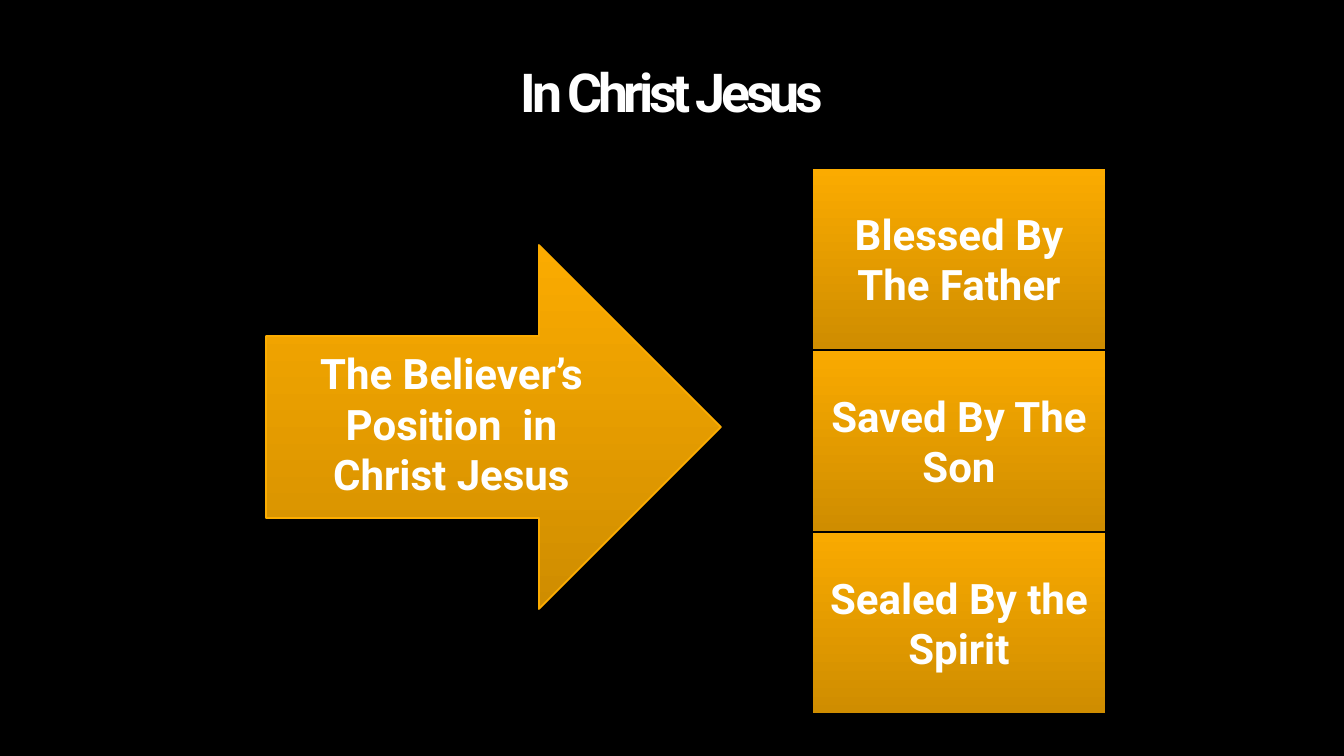
from pptx import Presentation
from pptx.dml.color import RGBColor
from pptx.enum.shapes import MSO_SHAPE
from pptx.enum.text import MSO_ANCHOR, PP_ALIGN
from pptx.util import Pt

FONT = {"name": "Roboto", "bold": True}
FRAME = {"word_wrap": True, "vertical_anchor": MSO_ANCHOR.MIDDLE}
BLESSINGS = ["Blessed By The Father", "Saved By The Son", "Sealed By the Spirit"]


def paint(color, value):
    """Set a colour from a hex string."""
    color.rgb = RGBColor.from_string(value)


def style(target, values):
    """Set each attribute from a dict of format values."""
    for name, value in values.items():
        setattr(target, name, value)


def add_gold(slide, kind, box, edge):
    """Add a shape with a gold gradient and a coloured edge."""
    shape = slide.shapes.add_shape(kind, *map(Pt, box))
    shape.shadow.inherit = False
    shape.fill.gradient()
    shape.fill.gradient_angle = 90
    for stop, value in zip(shape.fill.gradient_stops, ["CF8D00", "FBAB00"]):
        paint(stop.color, value)
    paint(shape.line.color, edge)
    shape.line.width = Pt(1.5)


def add_label(slide, text, box, size=36):
    """Add bold white centred text and return its run."""
    frame = slide.shapes.add_textbox(*map(Pt, box)).text_frame
    style(frame, FRAME)
    para = frame.paragraphs[0]
    para.alignment = PP_ALIGN.CENTER
    run = para.add_run()
    run.text = text
    style(run.font, {**FONT, "size": Pt(size)})
    paint(run.font.color, "FFFFFF")
    return run


def add_title(slide, box):
    """Add the tightly spaced heading."""
    run = add_label(slide, "In Christ Jesus", box, 46)
    run.font._element.set("spc", "-360")


def add_arrow(slide, box):
    """Add the arrow and the text in its shaft."""
    left, top, wide, high = box
    add_gold(slide, MSO_SHAPE.RIGHT_ARROW, box, "FCAC00")
    place = (left + 18, top + 84, wide - 108, high - 174)
    add_label(slide, "The Believer’s Position  in Christ Jesus", place)


def add_stack(slide, box):
    """Stack equal panels upwards, each tucked under the one above."""
    left, top, wide, high = box
    step = high / len(BLESSINGS)
    for row, text in reversed(list(enumerate(BLESSINGS))):
        head = top + row * step
        tuck = 6 if row else 0
        panel = (left, head - tuck, wide, step + tuck)
        add_gold(slide, MSO_SHAPE.RECTANGLE, panel, "000000")
        add_label(slide, text, (left + 6, head + 31, wide - 12, step - 62))


def main():
    """Build and save the slide."""
    deck = Presentation()
    style(deck, {"slide_width": Pt(1152), "slide_height": Pt(648)})
    slide = deck.slides.add_slide(deck.slide_layouts[6])
    slide.background.fill.solid()
    paint(slide.background.fill.fore_color, "000000")
    add_title(slide, (86.4, 42, 979.2, 72))
    add_arrow(slide, (228, 210, 390, 312))
    add_stack(slide, (696, 144, 252, 468))
    deck.save("out.pptx")


if __name__ == "__main__":
    main()
